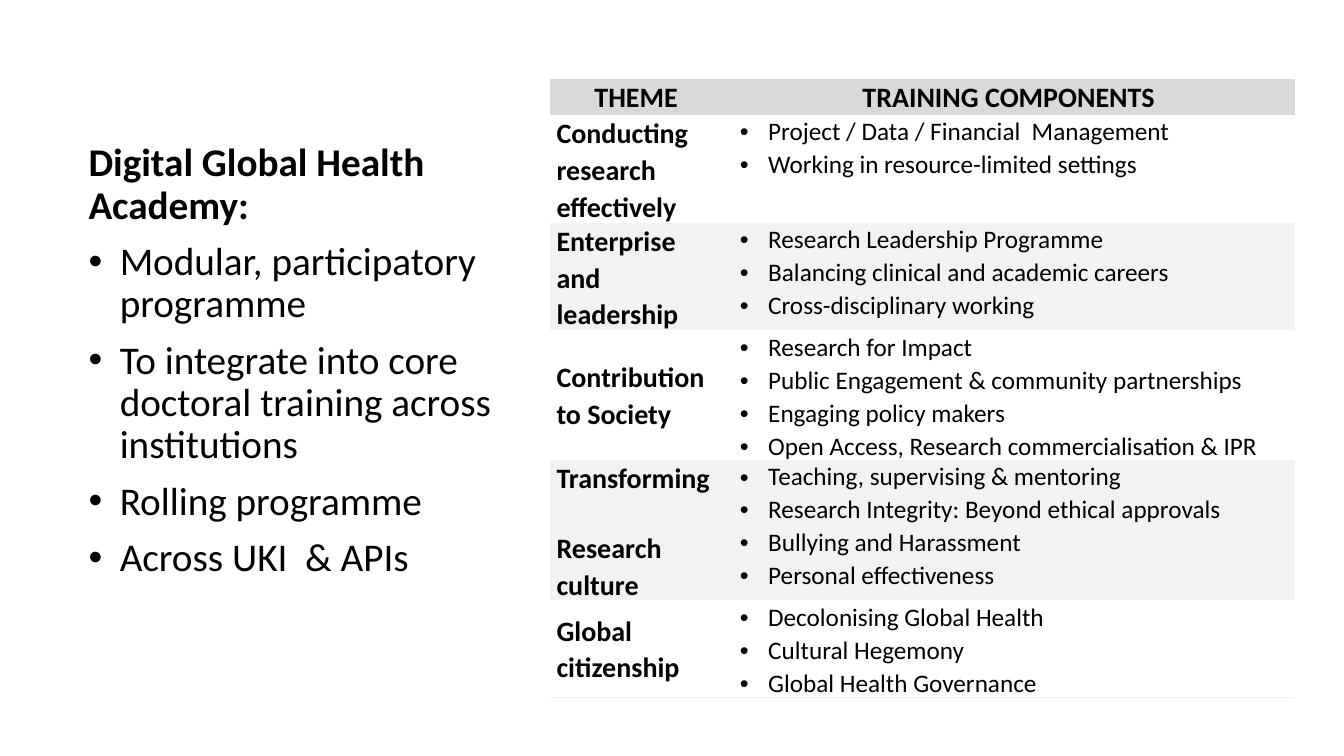
from pptx import Presentation
from pptx import util as u
from pptx.dml import color
from pptx.enum import text
from pptx.oxml import ns
from lxml import etree

COLOURS = {"ink": "000000", "header": "D9D9D9", "band": "F2F2F2"}
FONT = "Calibri"
NO_GRID_STYLE = "{2D5ABB26-0587-4C30-8999-92F81FD0307C}"

ACADEMY = "Digital Global Health Academy:"
FEATURES = [
    "Modular, participatory programme",
    "To integrate into core doctoral training across institutions",
    "Rolling programme",
    "Across UKI  & APIs",
]
HEADINGS = ["THEME", "TRAINING COMPONENTS"]
THEMES = [
    ("Conducting \nresearch effectively", 1.02,
     ["Project / Data / Financial  Management",
      "Working in resource-limited settings"]),
    ("Enterprise and leadership", 1.02,
     ["Research Leadership Programme",
      "Balancing clinical and academic careers",
      "Cross-disciplinary working"]),
    ("Contribution \nto Society", 1.22,
     ["Research for Impact",
      "Public Engagement & community partnerships",
      "Engaging policy makers",
      "Open Access, Research commercialisation & IPR"]),
    ("Transforming \nResearch culture", 1.22,
     ["Teaching, supervising & mentoring",
      "Research Integrity: Beyond ethical approvals",
      "Bullying and Harassment",
      "Personal effectiveness"]),
    ("Global \ncitizenship", 0.91,
     ["Decolonising Global Health",
      "Cultural Hegemony",
      "Global Health Governance"]),
]


def rgb(name):
    return color.RGBColor.from_string(COLOURS[name])


def add_bullet(paragraph, indent, hanging):
    props = paragraph._p.get_or_add_pPr()
    props.set("marL", str(u.Inches(indent)))
    props.set("indent", str(-u.Inches(hanging)))
    etree.SubElement(props, ns.qn("a:buFont"), typeface="Arial")
    etree.SubElement(props, ns.qn("a:buChar"), char="•")


def write_lines(frame, lines, size, spacing, bold=False, before=0, after=0,
                align=text.PP_ALIGN.LEFT, bullet=None):
    for i, line in enumerate(lines):
        paragraph = frame.paragraphs[0] if i == 0 else frame.add_paragraph()
        paragraph.text = line
        if bullet:
            add_bullet(paragraph, *bullet)
        paragraph.alignment = align
        paragraph.line_spacing = spacing
        paragraph.space_before = u.Pt(before if i else 0)
        paragraph.space_after = u.Pt(after)
        for run in paragraph.runs:
            run.font.name = FONT
            run.font.size = u.Pt(size)
            run.font.bold = bold
            run.font.color.rgb = rgb("ink")


def add_academy_summary(slide, left, top, width, height):
    summary = slide.shapes.add_textbox(*map(u.Inches, (left, top, width, height)))
    frame = summary.text_frame
    frame.word_wrap = True
    write_lines(frame, [ACADEMY] + FEATURES, 28, 0.9, before=10)
    frame.paragraphs[0].runs[0].font.bold = True
    for feature in frame.paragraphs[1:]:
        add_bullet(feature, 0.31, 0.31)


def prepare_cell(cell, fill, anchor):
    cell.margin_left = cell.margin_right = u.Inches(0.07)
    cell.margin_top = cell.margin_bottom = 0
    cell.vertical_anchor = anchor
    if fill:
        cell.fill.solid()
        cell.fill.fore_color.rgb = rgb(fill)
    else:
        cell.fill.background()


def add_bottom_border(cell):
    border = etree.Element(ns.qn("a:lnB"), w=str(u.Pt(1)))
    solid = etree.SubElement(border, ns.qn("a:solidFill"))
    etree.SubElement(solid, ns.qn("a:srgbClr"), val=COLOURS["band"])
    cell._tc.get_or_add_tcPr().insert(0, border)


def add_training_table(slide, left, top, width, height):
    holder = slide.shapes.add_table(
        len(THEMES) + 1, 2, *map(u.Inches, (left, top, width, height)))
    training = holder.table
    training._tbl.tblPr.find(ns.qn("a:tableStyleId")).text = NO_GRID_STYLE
    training.first_row = training.horz_banding = False
    theme_width = 1.72
    training.columns[0].width = u.Inches(theme_width)
    training.columns[1].width = u.Inches(width - theme_width)

    middle, upper = text.MSO_ANCHOR.MIDDLE, text.MSO_ANCHOR.TOP
    training.rows[0].height = u.Inches(0.33)
    for column, heading in enumerate(HEADINGS):
        cell = training.cell(0, column)
        prepare_cell(cell, "header", middle)
        write_lines(cell.text_frame, [heading], 20, 1.07, bold=True, after=8,
                    align=text.PP_ALIGN.CENTER)

    for row, (theme, row_height, components) in enumerate(THEMES, 1):
        training.rows[row].height = u.Inches(row_height)
        fill = "band" if row % 2 == 0 else None
        theme_cell, components_cell = training.cell(row, 0), training.cell(row, 1)
        prepare_cell(theme_cell, fill, middle)
        write_lines(theme_cell.text_frame, [theme], 20, 1.07, bold=True, after=3)
        prepare_cell(components_cell, fill, upper)
        write_lines(components_cell.text_frame, components, 18, 1.07,
                    bullet=(0.38, 0.28))
    for column in range(2):
        add_bottom_border(training.cell(len(THEMES), column))


def main():
    deck = Presentation()
    deck.slide_width, deck.slide_height = u.Inches(13.33), u.Inches(7.5)
    slide = deck.slides.add_slide(deck.slide_layouts[6])
    add_academy_summary(slide, 0.78, 1.37, 4.67, 4.76)
    add_training_table(slide, 5.45, 0.78, 7.39, 5.94)
    deck.save("out.pptx")


if __name__ == "__main__":
    main()
